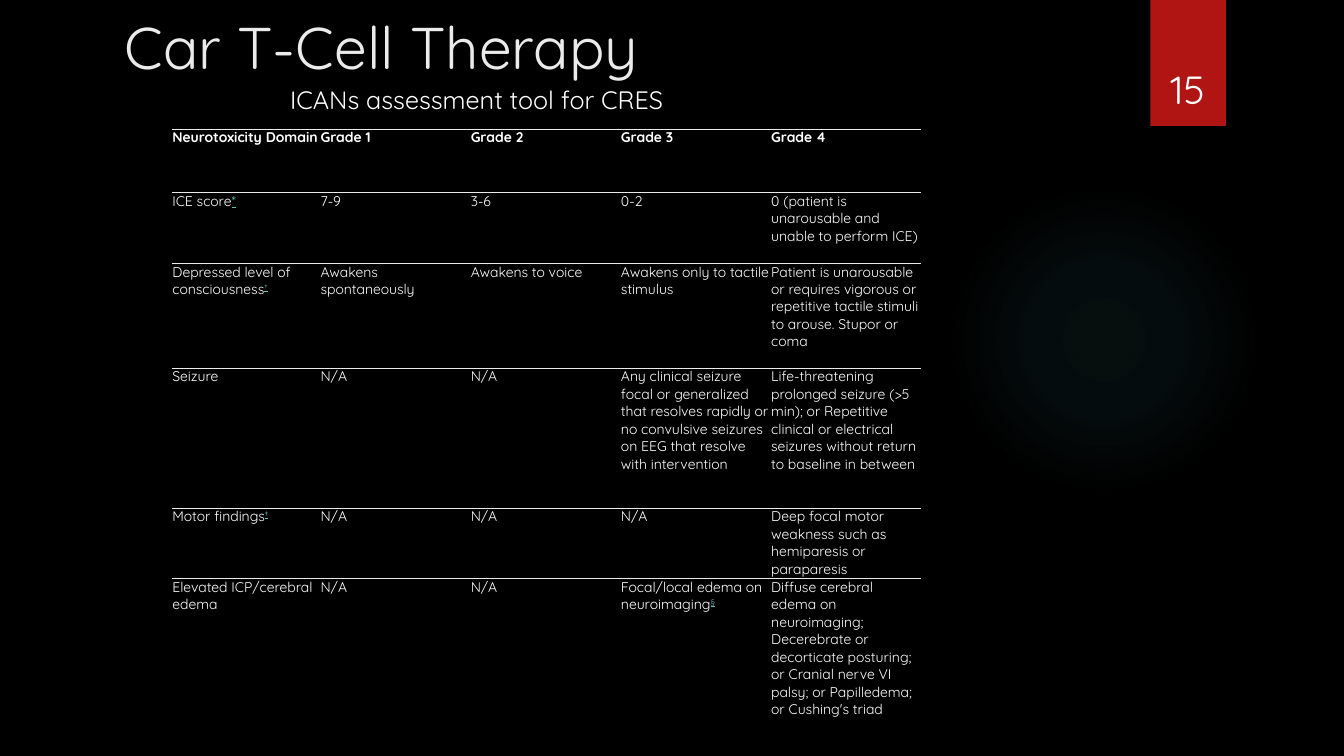
import pptx
import pptx.util
import pptx.dml.color
import pptx.enum.shapes
import pptx.enum.text
import pptx.oxml

Inches = pptx.util.Inches
Pt = pptx.util.Pt
MSO_SHAPE = pptx.enum.shapes.MSO_SHAPE
ANCHOR = pptx.enum.text.MSO_ANCHOR
ALIGN = pptx.enum.text.PP_ALIGN
NS = 'xmlns:a="http://schemas.openxmlformats.org/drawingml/2006/main"'


def rgb(value):
    return pptx.dml.color.RGBColor.from_string(value)


def add_run(p, text, size, color="FFFFFF", bold=False):
    r = p.add_run()
    r.text = text
    r.font.name = "Quicksand"
    r.font.size = Pt(size)
    r.font.bold = bold
    r.font.color.rgb = rgb(color)
    return r


prs = pptx.Presentation()
prs.slide_width = Inches(13.33)
prs.slide_height = Inches(7.5)
s = prs.slides.add_slide(prs.slide_layouts[6])
s.background.fill.solid()
s.background.fill.fore_color.rgb = rgb("000000")

glow = s.shapes.add_shape(MSO_SHAPE.OVAL, Inches(9.41), Inches(1.83), Inches(3.08), Inches(3.08))
glow.shadow.inherit = False
glow.line.fill.background()
glow.fill.gradient()
stops = "".join(
    f'<a:gs pos="{pos * 1000}"><a:srgbClr val="50B9C1"><a:alpha val="{alpha * 1000}"/></a:srgbClr></a:gs>'
    for pos, alpha in [(0, 7), (36, 6), (69, 0)]
)
grad = pptx.oxml.parse_xml(
    f'<a:gradFill {NS} rotWithShape="1"><a:gsLst>{stops}</a:gsLst><a:path path="circle">'
    '<a:fillToRect l="50000" t="50000" r="50000" b="50000"/></a:path></a:gradFill>'
)
sp_pr = glow.element.spPr
sp_pr.replace(sp_pr.find(pptx.oxml.ns.qn("a:gradFill")), grad)

tab = s.shapes.add_shape(MSO_SHAPE.RECTANGLE, Inches(11.41), 0, Inches(0.75), Inches(1.25))
tab.shadow.inherit = False
tab.fill.solid()
tab.fill.fore_color.rgb = rgb("B01513")
tab.line.fill.background()

labels = [
    ("Car T-Cell Therapy", 1.14, 0, 10.29, 0.92, 42, "EBEBEB", ANCHOR.MIDDLE, ALIGN.LEFT, True),
    ("ICANs assessment tool for CRES", 2.78, 0.79, 4.06, 0.4, 18, "FFFFFF", ANCHOR.TOP, ALIGN.LEFT, False),
    ("15", 11.32, 0.32, 0.92, 0.84, 28, "FFFFFF", ANCHOR.BOTTOM, ALIGN.CENTER, True),
]
for text, left, top, width, height, size, color, anchor, align, wrap in labels:
    box = s.shapes.add_textbox(Inches(left), Inches(top), Inches(width), Inches(height))
    tf = box.text_frame
    tf.word_wrap = wrap
    tf.vertical_anchor = anchor
    p = tf.paragraphs[0]
    p.alignment = align
    add_run(p, text, size, color)

rows = [
    ["Neurotoxicity Domain", "Grade 1", "Grade 2", "Grade 3", "Grade 4"],
    ["ICE score*", "7-9", "3-6", "0-2", "0 (patient is unarousable and unable to perform ICE)"],
    ["Depressed level of consciousness†", "Awakens spontaneously", "Awakens to voice",
     "Awakens only to tactile stimulus",
     "Patient is unarousable or requires vigorous or repetitive tactile stimuli to arouse. Stupor or coma"],
    ["Seizure", "N/A", "N/A",
     "Any clinical seizure focal or generalized that resolves rapidly or no convulsive seizures on EEG "
     "that resolve with intervention",
     "Life-threatening prolonged seizure (>5 min); or Repetitive clinical or electrical seizures "
     "without return to baseline in between"],
    ["Motor findings‡", "N/A", "N/A", "N/A", "Deep focal motor weakness such as hemiparesis or paraparesis"],
    ["Elevated ICP/cerebral edema", "N/A", "N/A", "Focal/local edema on neuroimaging§",
     "Diffuse cerebral edema on neuroimaging; Decerebrate or decorticate posturing; "
     "or Cranial nerve VI palsy; or Papilledema; or Cushing's triad"],
]
col_widths = [1.47, 1.49, 1.49, 1.49, 1.49]
row_heights = [0.63, 0.7, 1.04, 1.39, 0.7, 1.73]
table = s.shapes.add_table(len(rows), len(col_widths), Inches(1.71), Inches(1.28),
                           Inches(7.44), Inches(6.19)).table
table.horz_banding = False
for col, width in zip(table.columns, col_widths):
    col.width = Inches(width)
for row, height in zip(table.rows, row_heights):
    row.height = Inches(height)

line_fill = '<a:solidFill><a:srgbClr val="EBEBEB"/></a:solidFill>'
for i, texts in enumerate(rows):
    for j, text in enumerate(texts):
        cell = table.cell(i, j)
        cell.margin_left = cell.margin_right = cell.margin_top = cell.margin_bottom = 0
        p = cell.text_frame.paragraphs[0]
        body = text.rstrip("*†‡§")
        mark = text[len(body):]
        add_run(p, body, 10, bold=i == 0)
        if mark:
            r = add_run(p, mark, 10, "58C1BA")
            r.font.underline = True
            if mark != "*":
                r.font._element.set("baseline", "30000")
        tc_pr = cell._tc.get_or_add_tcPr()
        for side in "LRTB":
            ruled = side == "T" or (side == "B" and i < len(rows) - 1)
            fill = line_fill if ruled else "<a:noFill/>"
            tc_pr.append(pptx.oxml.parse_xml(f'<a:ln{side} {NS} w="3175">{fill}</a:ln{side}>'))
        cell.fill.background()

prs.save("out.pptx")
